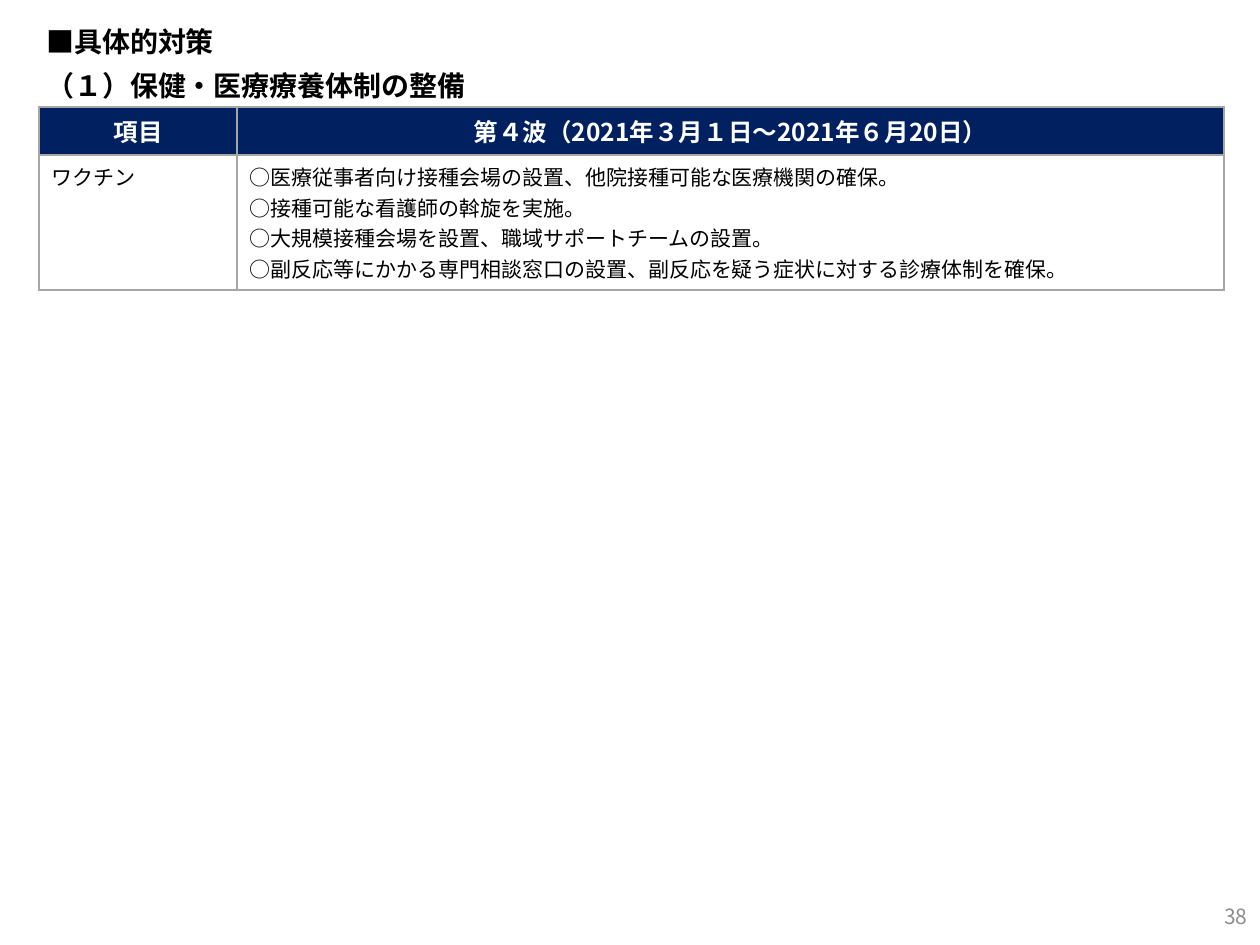
"""Build the slide on vaccine measures during the fourth wave."""
from dataclasses import dataclass

from lxml.etree import SubElement
from pptx import Presentation
from pptx.dml.color import RGBColor
from pptx.enum.text import MSO_ANCHOR, MSO_AUTO_SIZE, PP_ALIGN
from pptx.oxml.ns import qn
from pptx.util import Pt


@dataclass(frozen=True)
class Theme:
    font: str = "Noto Sans CJK JP"
    black: str = "000000"
    white: str = "FFFFFF"
    navy: str = "002060"
    grey: str = "8C8C8C"
    border: str = "A6A6A6"
    title_size: int = 16
    header_size: int = 14
    body_size: int = 12


theme = Theme()


def write_lines(frame, lines, size, color, bold=False, align=PP_ALIGN.LEFT, spacing=None):
    frame.text = "\n".join(lines)
    for paragraph in frame.paragraphs:
        paragraph.alignment = align
        if spacing:
            paragraph.line_spacing = Pt(spacing)
        font = paragraph.font
        font.size = Pt(size)
        font.bold = bold
        font.color.rgb = RGBColor.from_string(color)
        font.name = theme.font
        properties = paragraph._p.pPr.find(qn("a:defRPr"))
        SubElement(properties, qn("a:ea"), typeface=theme.font)


def add_borders(cell):
    properties = cell._tc.get_or_add_tcPr()
    for position, side in enumerate(("lnL", "lnR", "lnT", "lnB")):
        line = SubElement(properties, qn(f"a:{side}"), w=str(Pt(1)))
        fill = SubElement(line, qn("a:solidFill"))
        SubElement(fill, qn("a:srgbClr"), val=theme.border)
        properties.insert(position, line)


presentation = Presentation()
presentation.slide_width, presentation.slide_height = Pt(720), Pt(540)
slide = presentation.slides.add_slide(presentation.slide_layouts[5])

title = slide.shapes.title
title.left, title.top, title.width, title.height = Pt(19.4), Pt(13.7), Pt(612), Pt(39.6)
title.text_frame.auto_size = MSO_AUTO_SIZE.NONE
title.text_frame.vertical_anchor = MSO_ANCHOR.MIDDLE
write_lines(title.text_frame, ["■具体的対策", "（１）保健・医療療養体制の整備"],
            theme.title_size, theme.black, bold=True, spacing=25)

page_number = slide.shapes.add_textbox(Pt(552), Pt(509), Pt(168), Pt(28.8))
page_number.text_frame.word_wrap = True
page_number.text_frame.vertical_anchor = MSO_ANCHOR.MIDDLE
write_lines(page_number.text_frame, ["38"], theme.body_size, theme.grey, align=PP_ALIGN.RIGHT)

rows = [
    [["項目"], ["第４波（2021年３月１日～2021年６月20日）"]],
    [["ワクチン"], [
        "○医療従事者向け接種会場の設置、他院接種可能な医療機関の確保。",
        "○接種可能な看護師の斡旋を実施。",
        "○大規模接種会場を設置、職域サポートチームの設置。",
        "○副反応等にかかる専門相談窓口の設置、副反応を疑う症状に対する診療体制を確保。",
    ]],
]
column_widths = [113, 564]
row_heights = [27.5, 77]
table = slide.shapes.add_table(len(rows), len(column_widths), Pt(22.4), Pt(61.2),
                               Pt(sum(column_widths)), Pt(sum(row_heights))).table
for column, width in zip(table.columns, column_widths):
    column.width = Pt(width)
for row, height in zip(table.rows, row_heights):
    row.height = Pt(height)

for row_index, row in enumerate(rows):
    is_header = row_index == 0
    for column_index, lines in enumerate(row):
        cell = table.cell(row_index, column_index)
        cell.fill.solid()
        cell.fill.fore_color.rgb = RGBColor.from_string(theme.navy if is_header else theme.white)
        add_borders(cell)
        if is_header:
            write_lines(cell.text_frame, lines, theme.header_size, theme.white,
                        bold=True, align=PP_ALIGN.CENTER)
        else:
            write_lines(cell.text_frame, lines, theme.body_size, theme.black)

presentation.save("out.pptx")
